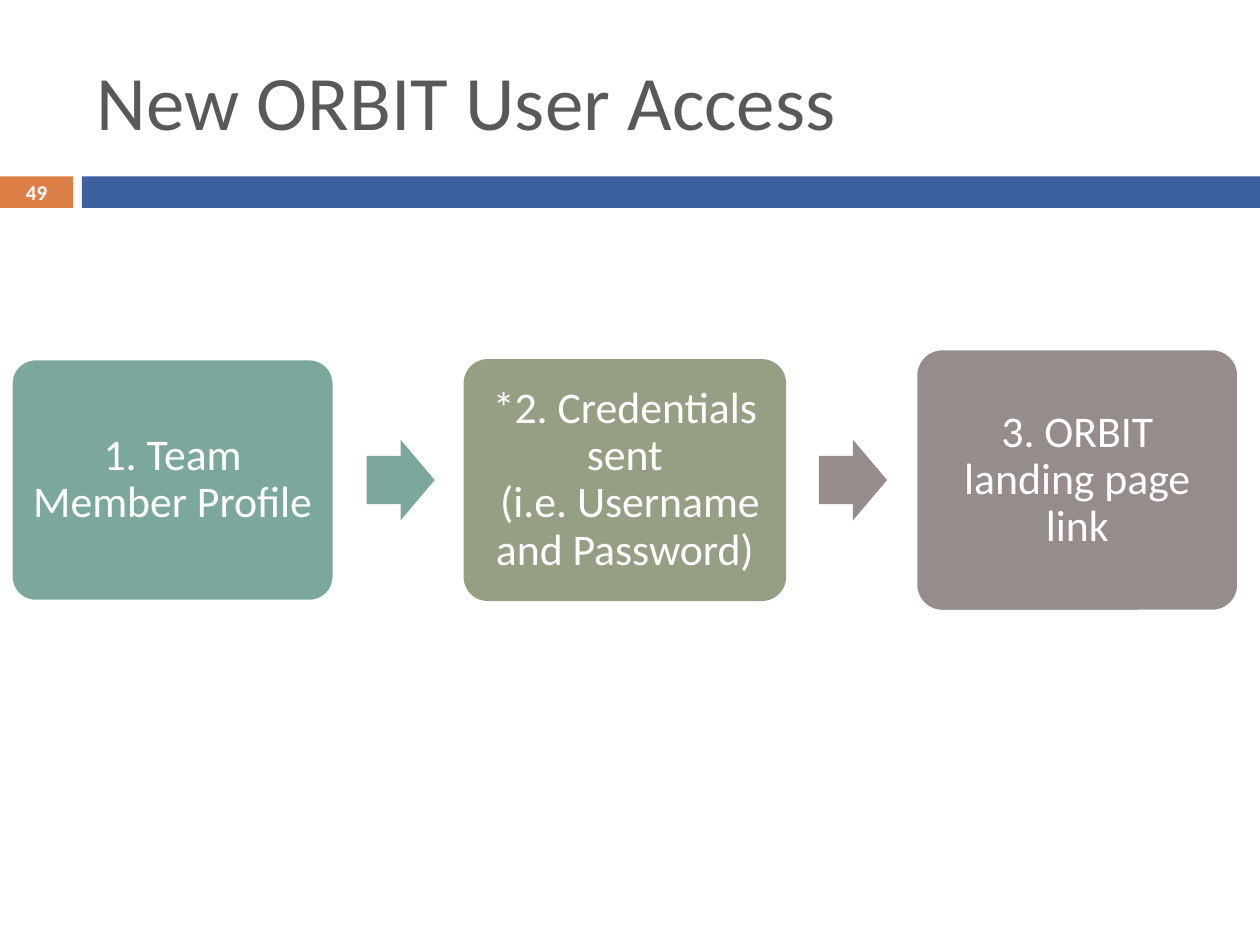
"""Build the ORBIT user access slide: title, ruled band and a three-step flow."""
from pptx import Presentation
from pptx.dml.color import RGBColor as Rgb
from pptx.enum.shapes import MSO_SHAPE as Kind
from pptx.enum.text import MSO_ANCHOR as Anchor, PP_ALIGN as Align
from pptx.util import Inches, Pt

THEME = {
    "font": "Calibri",
    "orange": "DD8047", "blue": "3C619E", "gray": "595959", "white": "FFFFFF",
    "teal": "7BA79D", "olive": "949F83", "taupe": "968C8C",
    "title": 44, "step": 25, "page": 12, "edge": 1.5,
}
TITLE = "New ORBIT User Access"
PAGE = "49"
STEPS = [
    {"text": "1. Team Member Profile", "fill": "teal", "high": 1.92, "edge": "white"},
    {"text": "*2. Credentials sent\v (i.e. Username and Password)",
     "fill": "olive", "high": 1.92, "edge": None},
    {"text": "3. ORBIT landing page link", "fill": "taupe", "high": 2.08, "edge": "white"},
]
ARROWS = ["teal", "taupe"]
LEFT, PITCH, WIDE, MID = 0.09, 3.59, 2.56, 3.81
HEAD = {"left": 2.91, "wide": 0.54, "high": 0.64}


def color(name):
    return Rgb.from_string(THEME[name])


def draw(slide, kind, box, fill, edge=None, bends=()):
    shape = slide.shapes.add_shape(kind, *map(Inches, box))
    shape.shadow.inherit = False
    shape.fill.solid()
    shape.fill.fore_color.rgb = color(fill)
    if edge:
        shape.line.color.rgb = color(edge)
        shape.line.width = Pt(THEME["edge"])
    else:
        shape.line.fill.background()
    for i, bend in enumerate(bends):
        shape.adjustments[i] = bend
    return shape


def write(shape, text, size, ink, pad=(0.1, 0.05), bold=False, align=Align.CENTER, gap=1.0):
    frame = shape.text_frame
    side, top = map(Inches, pad)
    look = {"word_wrap": True, "vertical_anchor": Anchor.MIDDLE,
            "margin_left": side, "margin_right": side,
            "margin_top": top, "margin_bottom": top}
    for key, val in look.items():
        setattr(frame, key, val)
    para = frame.paragraphs[0]
    para.text = text
    para.alignment, para.line_spacing = align, gap
    style = {"name": THEME["font"], "size": Pt(THEME[size]), "bold": bold}
    for run in para.runs:
        for key, val in style.items():
            setattr(run.font, key, val)
        run.font.color.rgb = color(ink)


def main():
    deck = Presentation()
    deck.slide_width, deck.slide_height = Inches(10), Inches(7.5)
    slide = deck.slides.add_slide(deck.slide_layouts[6])

    tab = draw(slide, Kind.RECTANGLE, (0, 1.4, 0.58, 0.25), "orange")
    write(tab, PAGE, "page", "white", pad=(0, 0), bold=True)
    draw(slide, Kind.RECTANGLE, (0.65, 1.4, 9.35, 0.25), "blue")
    title = slide.shapes.add_textbox(*map(Inches, (0.67, 0.25, 8.92, 1.08)))
    write(title, TITLE, "title", "gray", align=Align.LEFT)

    for i, step in enumerate(STEPS):
        high = step["high"]
        box = (LEFT + i * PITCH, MID - high / 2, WIDE, high)
        card = draw(slide, Kind.ROUNDED_RECTANGLE, box, step["fill"], step["edge"], [0.1])
        write(card, step["text"], "step", "white", pad=(0.1, 0.1), gap=0.9)

    for i, fill in enumerate(ARROWS):
        box = (HEAD["left"] + i * PITCH, MID - HEAD["high"] / 2, HEAD["wide"], HEAD["high"])
        draw(slide, Kind.RIGHT_ARROW, box, fill, bends=[0.6, 0.5])

    deck.save("out.pptx")


if __name__ == "__main__":
    main()
